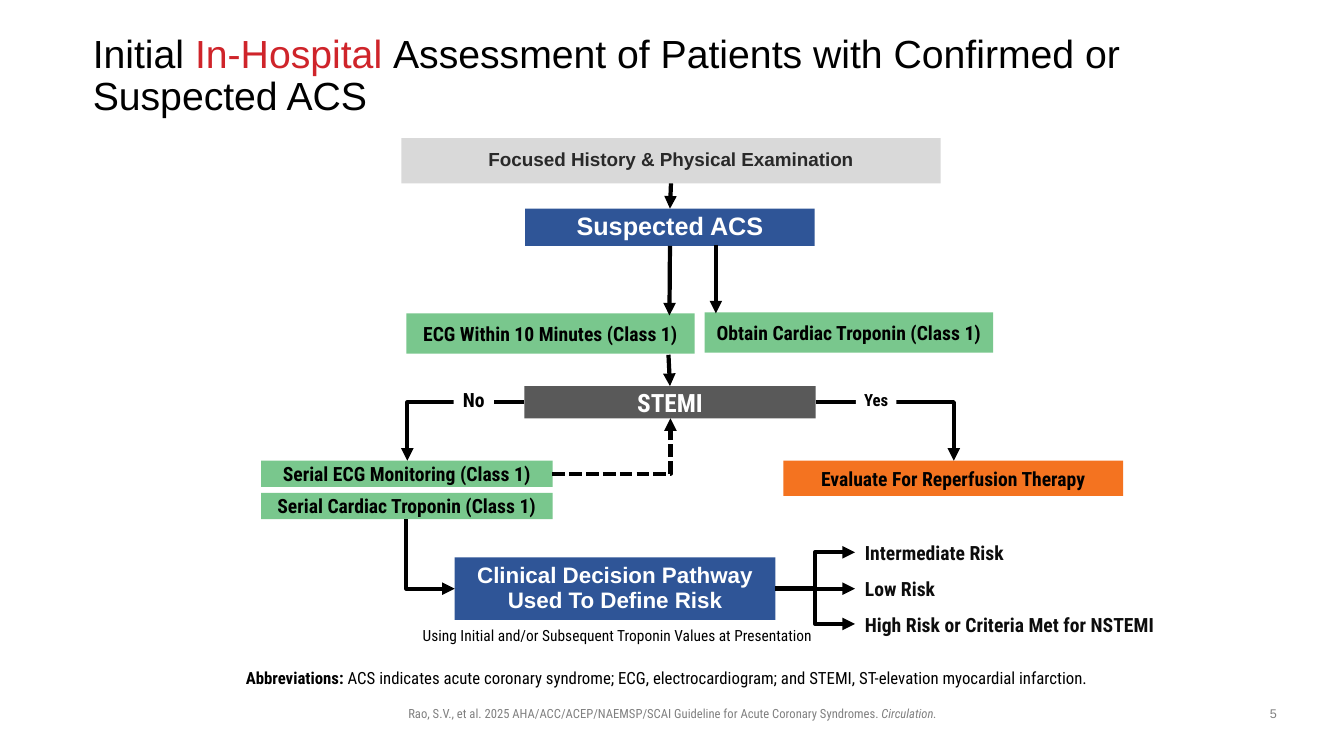
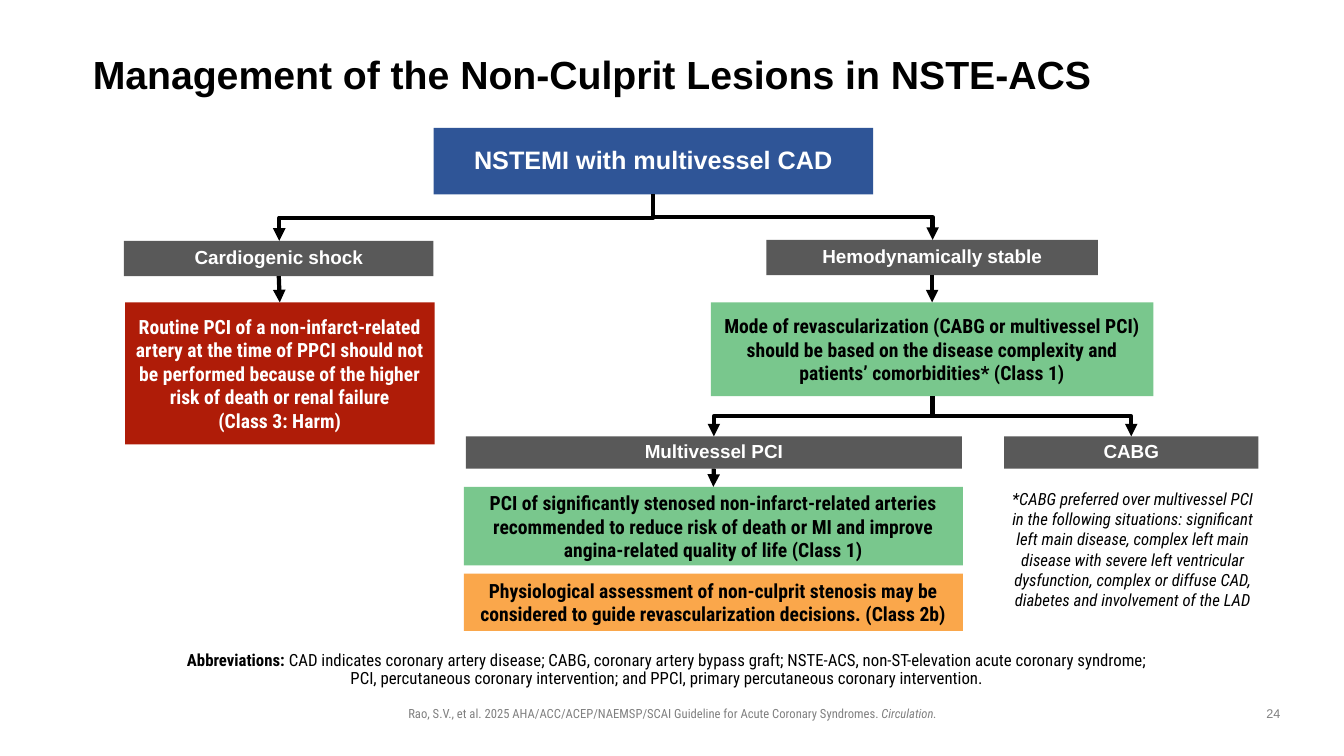
from lxml import etree
from pptx import Presentation
from pptx.dml.color import RGBColor
from pptx.enum.dml import MSO_LINE
from pptx.enum.shapes import MSO_CONNECTOR, MSO_SHAPE
from pptx.enum.text import MSO_ANCHOR, MSO_AUTO_SIZE, PP_ALIGN
from pptx.oxml.ns import qn
from pptx.util import Inches, Pt

STRAIGHT, ELBOW = MSO_CONNECTOR.STRAIGHT, MSO_CONNECTOR.ELBOW
RECTANGLE, DASH = MSO_SHAPE.RECTANGLE, MSO_LINE.SQUARE_DOT
TOP, MIDDLE, BOTTOM = MSO_ANCHOR.TOP, MSO_ANCHOR.MIDDLE, MSO_ANCHOR.BOTTOM
LEFT, CENTER = PP_ALIGN.LEFT, PP_ALIGN.CENTER
SIDE_TOP, SIDE_LEFT, SIDE_BOTTOM, SIDE_RIGHT = range(4)
TITLE_ONLY = 5

COLORS = {
    "black": "000000", "white": "FFFFFF", "ink": "0D0D0D", "charcoal": "292929",
    "muted": "808080", "red": "CF242A", "blue": "2F5597", "gray": "595959",
    "light": "D9D9D9", "green": "79C78D", "orange": "F47320", "amber": "FAA74B",
    "harm": "AF1C08",
}

SANS, NARROW = "Arial", "Roboto Condensed"
NO_INSETS = (0, 0, 0, 0)
USUAL_INSETS = (0.1, 0.05, 0.1, 0.05)
TIGHT = {"line_spacing": 0.9}


def style(name, size, color="black", bold=False, italic=False, align=CENTER,
          anchor=MIDDLE, insets=USUAL_INSETS, spacing=None):
    """Gather the format values of one kind of text."""
    return {
        "font": {"name": name, "size": Pt(size), "bold": bold, "italic": italic},
        "color": color,
        "para": {"alignment": align, **(spacing or {})},
        "anchor": anchor,
        "insets": insets,
    }


def heading(size, color="white"):
    return style(SANS, size, color, bold=True, insets=NO_INSETS, spacing=TIGHT)


STYLES = {
    "title": style(SANS, 28, align=LEFT, insets=NO_INSETS, spacing=TIGHT),
    "heading": heading(18),
    "pathway": heading(16),
    "branch": heading(13.5),
    "history": heading(13.5, "charcoal"),
    "stemi": style(NARROW, 18, "white", bold=True),
    "action": style(NARROW, 14, bold=True),
    "harm": style(NARROW, 14, "white", bold=True),
    "no": style(NARROW, 14, bold=True, anchor=TOP, insets=NO_INSETS),
    "yes": style(NARROW, 12, bold=True, anchor=TOP, insets=NO_INSETS),
    "risk": style(NARROW, 14, "ink", bold=True, align=LEFT),
    "caption": style(NARROW, 11, anchor=TOP),
    "note": style(NARROW, 12, italic=True, anchor=TOP),
    "abbreviations": style(NARROW, 12, anchor=BOTTOM,
                           insets=(0, 0.05, 0.1, 0.05), spacing=TIGHT),
    "citation": style(NARROW, 9, "muted", anchor=TOP),
    "number": style(SANS, 9, "muted", anchor=TOP),
}


def rgb(color):
    return RGBColor.from_string(COLORS[color])


def set_values(target, values):
    for name, value in values.items():
        setattr(target, name, value)


def write_text(box, look, *lines):
    """Write lines; each is a string or a list of (text, changes) spans."""
    frame = box.text_frame
    margins = ("margin_left", "margin_top", "margin_right", "margin_bottom")
    set_values(frame, dict(zip(margins, map(Inches, look["insets"]))))
    set_values(frame, {"word_wrap": True, "auto_size": MSO_AUTO_SIZE.NONE,
                       "vertical_anchor": look["anchor"]})
    for index, line in enumerate(lines):
        para = frame.add_paragraph() if index else frame.paragraphs[0]
        set_values(para, look["para"])
        for text, changes in [(line, {})] if isinstance(line, str) else line:
            values = {**look["font"], **changes}
            color = values.pop("color", look["color"])
            span = para.add_run()
            span.text = text
            set_values(span.font, values)
            span.font.color.rgb = rgb(color)


def add_box(page, area, fill, kind, *lines):
    box = page.shapes.add_shape(RECTANGLE, *map(Inches, area))
    box.shadow.inherit = False
    box.fill.solid()
    box.fill.fore_color.rgb = rgb(fill)
    box.line.fill.background()
    write_text(box, STYLES[kind], *lines)
    return box


def add_label(page, area, kind, *lines):
    label = page.shapes.add_textbox(*map(Inches, area))
    write_text(label, STYLES[kind], *lines)
    return label


def format_arrow(arrow, dashed=False):
    arrow.line.color.rgb = rgb("black")
    arrow.line.width = Pt(3)
    if dashed:
        arrow.line.dash_style = DASH
    etree.SubElement(arrow.line._get_or_add_ln(), qn("a:tailEnd"), type="triangle")
    etree.SubElement(arrow._element.spPr, qn("a:effectLst"))


def add_arrow(page, start, end, source=None, target=None):
    """Straight arrow; source and target are (box, side) joints."""
    arrow = page.shapes.add_connector(STRAIGHT, *map(Inches, start + end))
    if source:
        arrow.begin_connect(*source)
    if target:
        arrow.end_connect(*target)
    format_arrow(arrow)


def join_boxes(page, source, target, sides=(SIDE_BOTTOM, SIDE_TOP)):
    add_arrow(page, (0, 0), (1, 1), (source, sides[0]), (target, sides[1]))


def add_elbow(page, start, end, bends=1, downward=False, dashed=False):
    """Bent arrow that leaves sideways, or downward, with one or two bends."""
    (x1, y1), (x2, y2) = start, end
    width, height = abs(x2 - x1), abs(y2 - y1)
    if downward:
        width, height = height, width
        rotation, flip = (270, "flipH") if x2 > x1 else (90, None)
    elif x2 < x1:
        rotation, flip = 180, "flipV"
    else:
        rotation, flip = 0, "flipV" if y2 < y1 else None
    left, top = (x1 + x2 - width) / 2, (y1 + y2 - height) / 2
    arrow = page.shapes.add_connector(
        ELBOW, *map(Inches, (left, top, left + width, top + height)))
    arrow.rotation = rotation
    properties = arrow._element.spPr
    if flip:
        properties.find(qn("a:xfrm")).set(flip, "1")
    properties.find(qn("a:prstGeom")).set("prst", f"bentConnector{bends + 1}")
    format_arrow(arrow, dashed)


def add_page(deck, number, title_width, title, abbreviations_area, *abbreviations):
    """Start a slide with its title, abbreviations, citation and number."""
    page = deck.slides.add_slide(deck.slide_layouts[TITLE_ONLY])
    heading_box = page.shapes.title
    places = zip(("left", "top", "width", "height"), (0.92, 0.4, title_width, 0.72))
    set_values(heading_box, {name: Inches(value) for name, value in places})
    write_text(heading_box, STYLES["title"], title)
    first, *others = abbreviations
    add_label(page, abbreviations_area, "abbreviations",
              [("Abbreviations: ", {"bold": True}), (first, {})], *others)
    add_label(page, (2.36, 6.95, 8.62, 0.25), "citation", [
        ("Rao, S.V., et al. 2025 AHA/ACC/ACEP/NAEMSP/SCAI Guideline for "
         "Acute Coronary Syndromes. ", {}),
        ("Circulation.", {"italic": True})])
    add_label(page, (12.42, 6.95, 0.42, 0.26), "number", number)
    return page


def build_assessment(deck):
    page = add_page(
        deck, "5", 10.69,
        [("Initial", {}), (" In-Hospital ", {"color": "red"}),
         ("Assessment of Patients with Confirmed or Suspected ACS", {})],
        (1.88, 6.42, 9.57, 0.46),
        "ACS indicates acute coronary syndrome; ECG, electrocardiogram; and "
        "STEMI, ST-elevation myocardial infarction.")

    # Work-up down to the STEMI decision
    history = add_box(page, (3.98, 1.37, 5.35, 0.45), "light", "history",
                      "Focused History & Physical Examination")
    suspected = add_box(page, (5.21, 2.07, 2.87, 0.37), "blue", "heading",
                        "Suspected ACS")
    add_box(page, (4.03, 3.11, 2.86, 0.4), "green", "action",
            "ECG Within 10 Minutes (Class 1)")
    add_box(page, (6.99, 3.1, 2.86, 0.4), "green", "action",
            "Obtain Cardiac Troponin (Class 1)")
    stemi = add_box(page, (5.2, 3.83, 2.89, 0.32), "gray", "stemi", "STEMI")
    join_boxes(page, history, suspected)
    add_arrow(page, (6.64, 2.43), (6.64, 3.13), source=(suspected, SIDE_BOTTOM))
    add_arrow(page, (7.1, 2.43), (7.1, 3.11))
    add_arrow(page, (6.63, 3.52), (6.64, 3.83), target=(stemi, SIDE_TOP))

    # Yes and no branches
    add_box(page, (7.77, 4.57, 3.37, 0.35), "orange", "action",
            "Evaluate For Reperfusion Therapy")
    for top, test in ((4.57, "ECG Monitoring"), (4.89, "Cardiac Troponin")):
        add_box(page, (2.59, top, 2.89, 0.26), "green", "action",
                f"Serial {test} (Class 1)")
    add_elbow(page, (5.2, 3.99), (4.04, 4.57))
    add_elbow(page, (8.09, 3.99), (9.46, 4.57))
    add_elbow(page, (5.48, 4.7), (6.65, 4.15), dashed=True)
    add_box(page, (4.5, 3.85, 0.4, 0.24), "white", "no", "No")
    add_box(page, (8.49, 3.87, 0.4, 0.2), "white", "yes", "Yes")

    # Risk pathway and its outcomes
    pathway = add_box(page, (4.51, 5.53, 3.18, 0.62), "blue", "pathway",
                      "Clinical Decision Pathway", "Used To Define Risk")
    add_label(page, (4.07, 6.16, 4.11, 0.29), "caption",
              "Using Initial and/or Subsequent Troponin Values at Presentation")
    add_elbow(page, (4.03, 5.15), (4.51, 5.84), downward=True)
    risks = [
        add_label(page, (8.48, 5.3 + 0.355 * row, 3.43, 0.37), "risk", risk)
        for row, risk in enumerate(("Intermediate Risk", "Low Risk",
                                    "High Risk or Criteria Met for NSTEMI"))]
    join_boxes(page, pathway, risks[1], (SIDE_RIGHT, SIDE_LEFT))
    for end_y in (5.48, 6.19):
        add_elbow(page, (7.69, 5.84), (8.48, end_y), bends=2)


def build_management(deck):
    page = add_page(
        deck, "24", 10.17,
        [("Management of the Non-Culprit Lesions in NSTE-ACS", {"bold": True})],
        (1.47, 6.42, 10.39, 0.46),
        "CAD indicates coronary artery disease; CABG, coronary artery bypass "
        "graft; NSTE-ACS, non-ST-elevation acute coronary syndrome;",
        "PCI, percutaneous coronary intervention; and PPCI, primary "
        "percutaneous coronary intervention.")

    # Presentation and haemodynamic state
    add_box(page, (4.3, 1.27, 4.36, 0.66), "blue", "heading",
            "NSTEMI with multivessel CAD")
    shock = add_box(page, (1.23, 2.39, 3.07, 0.35), "gray", "branch",
                    "Cardiogenic shock")
    stable = add_box(page, (7.6, 2.38, 3.29, 0.35), "gray", "branch",
                     "Hemodynamically stable")
    harm = add_box(
        page, (1.24, 3, 3.07, 1.41), "harm", "harm",
        "Routine PCI of a non-infarct-related artery at the time of PPCI should "
        "not be performed because of the higher risk of death or renal failure",
        "(Class 3: Harm)")
    mode = add_box(
        page, (7.05, 3, 4.39, 0.93), "green", "action",
        "Mode of revascularization (CABG or multivessel PCI) should be based on "
        "the disease complexity and patients’ comorbidities* (Class 1)")

    # Revascularization choices
    multivessel = add_box(page, (4.62, 4.33, 4.92, 0.32), "gray", "branch",
                          "Multivessel PCI")
    add_box(page, (9.96, 4.33, 2.52, 0.32), "gray", "branch", "CABG")
    arteries = add_box(
        page, (4.6, 4.83, 4.95, 0.78), "green", "action",
        "PCI of significantly stenosed non-infarct-related arteries recommended "
        "to reduce risk of death or MI and improve angina-related quality of "
        "life (Class 1)")
    add_box(page, (4.6, 5.69, 4.95, 0.57), "amber", "action",
            "Physiological assessment of non-culprit stenosis may be considered "
            "to guide revascularization decisions. (Class 2b)")
    add_label(page, (9.94, 4.8, 2.59, 1.51), "note",
              "*CABG preferred over multivessel PCI in the following situations: "
              "significant left main disease, complex left main disease with "
              "severe left ventricular dysfunction, complex or diffuse CAD, "
              "diabetes and involvement of the LAD")

    # Arrows
    for source, target in ((shock, harm), (stable, mode), (multivessel, arteries)):
        join_boxes(page, source, target)
    for start, ends in (((6.48, 1.93), ((2.77, 2.39), (9.25, 2.38))),
                        ((9.25, 3.93), ((7.08, 4.33), (11.22, 4.33)))):
        for end in ends:
            add_elbow(page, start, end, bends=2, downward=True)


def main():
    deck = Presentation()
    deck.slide_width, deck.slide_height = Inches(13.33), Inches(7.5)
    build_assessment(deck)
    build_management(deck)
    deck.save("out.pptx")


if __name__ == "__main__":
    main()
